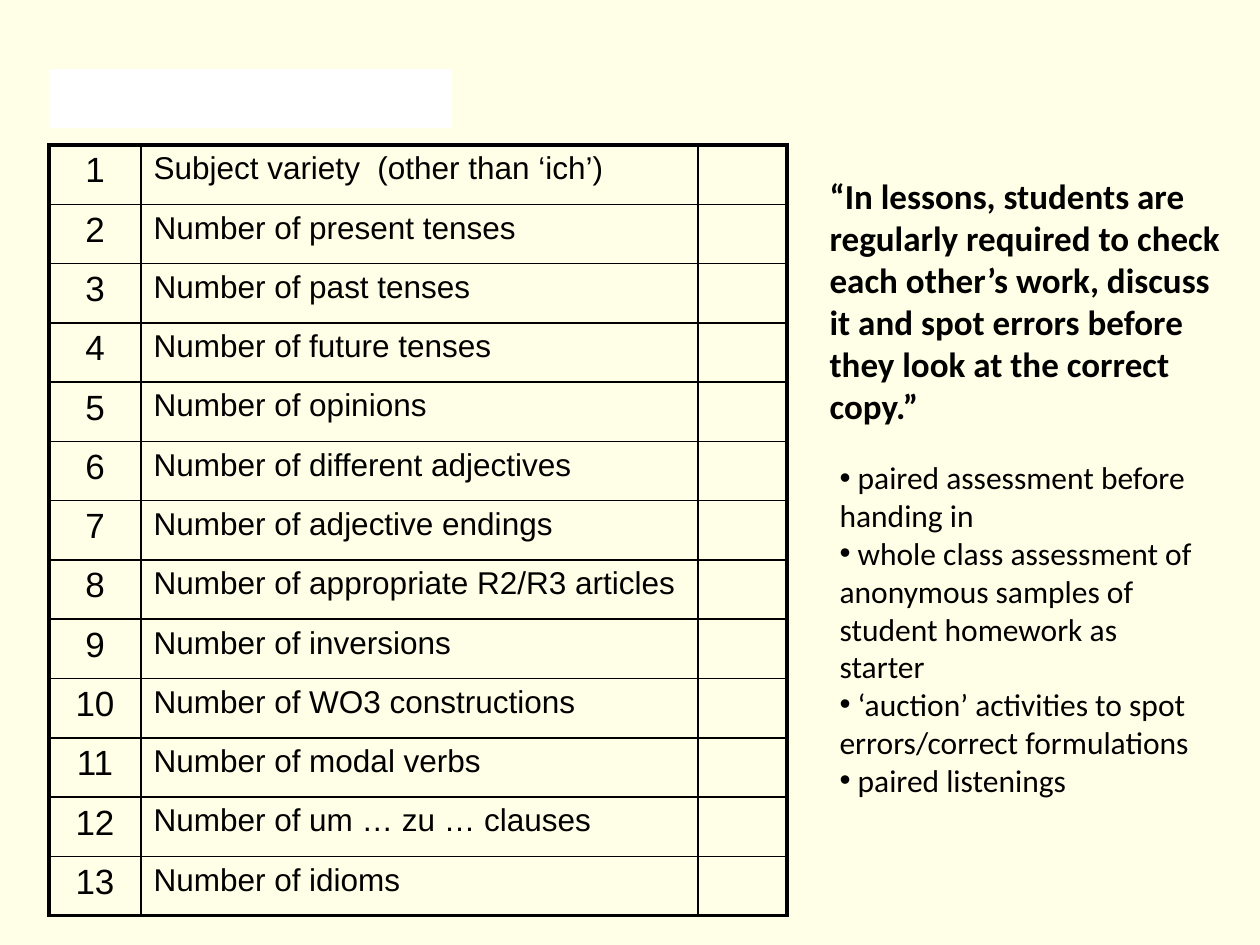
from dataclasses import dataclass

from lxml import etree
from pptx import Presentation
from pptx import util as u
from pptx.dml.color import RGBColor
from pptx.enum import shapes, text
from pptx.oxml import ns

SCALE = 914400 / 126
CREAM = RGBColor(0xFF, 0xFF, 0xE7)
WHITE = RGBColor(0xFF, 0xFF, 0xFF)
BLACK = RGBColor(0x00, 0x00, 0x00)
THIN, THICK = 1, 2.25

CRITERIA = [
    "Subject variety  (other than ‘ich’)",
    "Number of present tenses",
    "Number of past tenses",
    "Number of future tenses",
    "Number of opinions",
    "Number of different adjectives",
    "Number of adjective endings",
    "Number of appropriate R2/R3 articles",
    "Number of inversions",
    "Number of WO3 constructions",
    "Number of modal verbs",
    "Number of um … zu … clauses",
    "Number of idioms",
]
QUOTE = (
    "“In lessons, students are regularly required to check each other’s work, "
    "discuss it and spot errors before they look at the correct copy.”"
)
ACTIVITIES = [
    "paired assessment before handing in",
    "whole class assessment of anonymous samples of student homework as starter",
    "‘auction’ activities to spot errors/correct formulations",
    "paired listenings",
]


@dataclass(frozen=True)
class Box:
    x: int
    y: int
    w: int
    h: int

    def emu(self) -> list[int]:
        return [px(n) for n in (self.x, self.y, self.w, self.h)]


@dataclass(frozen=True)
class Column:
    width: int
    size: int
    align: text.PP_ALIGN


TABLE = Box(49, 145, 738, 771)
LABEL = Box(49, 69, 403, 59)
QUOTE_BOX = Box(817, 168, 423, 267)
LIST_BOX = Box(827, 452, 384, 432)
COLUMNS = [
    Column(92, 20, text.PP_ALIGN.CENTER),
    Column(557, 18, text.PP_ALIGN.LEFT),
    Column(89, 18, text.PP_ALIGN.LEFT),
]


def px(n: int) -> int:
    return round(n * SCALE)


def write(p, words: str, *, size: int, font: str = "Calibri", bold: bool = False,
          align=text.PP_ALIGN.LEFT) -> None:
    p.alignment = align
    p.space_before = u.Pt(0)
    p.line_spacing = 1.0
    r = p.add_run()
    r.text = words
    r.font.size = u.Pt(size)
    r.font.name = font
    r.font.bold = bold
    r.font.color.rgb = BLACK


def set_bullet(p) -> None:
    pr = p._p.get_or_add_pPr()
    pr.set("marL", "0")
    pr.set("indent", "0")
    etree.SubElement(pr, ns.qn("a:buFont")).set("typeface", "Arial")
    etree.SubElement(pr, ns.qn("a:buChar")).set("char", "•")


def set_borders(cell, sides: dict[str, float]) -> None:
    pr = cell._tc.get_or_add_tcPr()
    for i, (side, width) in enumerate(sides.items()):
        ln = etree.Element(ns.qn(f"a:ln{side}"), w=str(u.Pt(width)))
        fill = etree.SubElement(ln, ns.qn("a:solidFill"))
        etree.SubElement(fill, ns.qn("a:srgbClr")).set("val", str(BLACK))
        pr.insert(i, ln)


def place(sp, box: Box):
    sp.left, sp.top, sp.width, sp.height = box.emu()
    tf = sp.text_frame
    tf.word_wrap = True
    tf.auto_size = text.MSO_AUTO_SIZE.NONE
    tf.vertical_anchor = text.MSO_ANCHOR.TOP
    return tf


def add_checklist(slide, box: Box, criteria: list[str]) -> None:
    last_row, last_col = len(criteria) - 1, len(COLUMNS) - 1
    table = slide.shapes.add_table(len(criteria), len(COLUMNS), *box.emu()).table
    table.first_row = table.horz_banding = False
    for col, column in zip(table.columns, COLUMNS):
        col.width = px(column.width)
    for i, criterion in enumerate(criteria):
        for j, (words, column) in enumerate(zip((str(i + 1), criterion, ""), COLUMNS)):
            cell = table.cell(i, j)
            cell.fill.background()
            set_borders(cell, {
                "L": THICK if j == 0 else THIN,
                "R": THICK if j == last_col else THIN,
                "T": THICK if i == 0 else THIN,
                "B": THICK if i == last_row else THIN,
            })
            if words:
                write(cell.text_frame.paragraphs[0], words, size=column.size,
                      font="Arial", align=column.align)


def add_label(slide, box: Box) -> None:
    sp = slide.shapes.add_shape(shapes.MSO_SHAPE.RECTANGLE, *box.emu())
    sp.shadow.inherit = False
    sp.fill.solid()
    sp.fill.fore_color.rgb = WHITE
    sp.line.fill.background()


def main() -> None:
    prs = Presentation()
    prs.slide_width, prs.slide_height = u.Inches(10), u.Inches(7.5)
    slide = prs.slides.add_slide(prs.slide_layouts[1])
    slide.background.fill.solid()
    slide.background.fill.fore_color.rgb = CREAM

    add_checklist(slide, TABLE, CRITERIA)
    add_label(slide, LABEL)

    tf = place(slide.shapes.title, QUOTE_BOX)
    write(tf.paragraphs[0], QUOTE, size=20, bold=True)

    tf = place(slide.placeholders[1], LIST_BOX)
    for i, activity in enumerate(ACTIVITIES):
        p = tf.add_paragraph() if i else tf.paragraphs[0]
        write(p, f" {activity}", size=18)
        set_bullet(p)

    prs.save("out.pptx")


if __name__ == "__main__":
    main()
